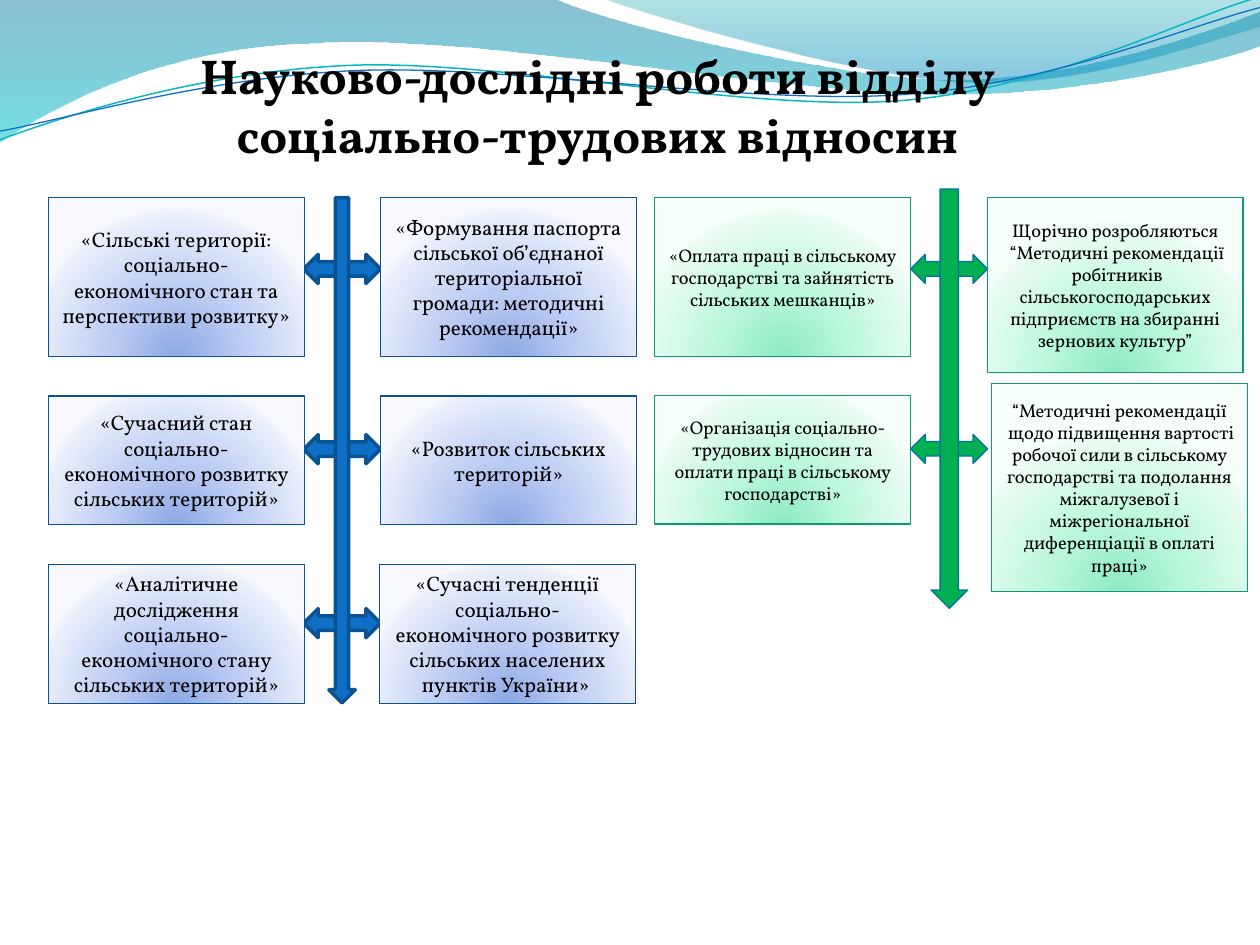
from lxml import etree
from pptx import Presentation
from pptx.dml.color import RGBColor
from pptx.enum.shapes import MSO_SHAPE
from pptx.enum.text import MSO_ANCHOR, PP_ALIGN
from pptx.oxml import parse_xml
from pptx.oxml.ns import nsdecls, qn
from pptx.util import Pt

RECTANGLE = MSO_SHAPE.RECTANGLE
SIDE_ARROW = MSO_SHAPE.LEFT_RIGHT_ARROW
DOWN_ARROW = MSO_SHAPE.DOWN_ARROW
CENTER, MIDDLE = PP_ALIGN.CENTER, MSO_ANCHOR.MIDDLE

FONT = "Vollkorn"
COLORS = {
    "text": "000000",
    "cyan line": "0AB8BF",
    "blue line": "0F6FC6",
    "blue arrow": "0F6FC6",
    "blue arrow edge": "0B5292",
    "blue box edge": "095295",
    "green arrow": "00B050",
    "green arrow edge": "0074A1",
    "green box edge": "0A9B74",
}
# Gradient stops: position %, colour, opacity %
GRADIENTS = {
    "blue box": [(0, "8DA8E3", 100), (43, "BBCBF3", 100), (93, "EAEFFB", 100), (100, "F7F9FF", 100)],
    "green box": [(0, "8DEAC2", 100), (43, "BAF8DB", 100), (93, "EAFCF3", 100), (100, "F7FFFB", 100)],
    "wide wave": [(0, "0074A1", 45), (100, "00C6CF", 55)],
    "right wave": [(0, "00A1A9", 30), (80, "008BBF", 45)],
}
LINEAR = '<a:lin ang="5400000" scaled="0"/>'
RADIAL = '<a:path path="circle"><a:fillToRect l="50000" t="130000" r="50000" b="-30000"/></a:path>'

# Each wave: name, start point, then lines (1 point) and Bezier curves (3 points)
WAVES = [
    ("wide wave", (0, 0), [
        [(316.8, -0.7)],
        [(342.7, 12.2), (478.1, 45.4), (545.8, 45.4)],
        [(614.2, 45.4), (689.8, 18.7), (720, 6.5)],
        [(720.7, 25.9)],
        [(707.8, 31.7), (626.4, 54.7), (537.1, 54)],
        [(447.8, 54), (275, 20.2), (185, 24.5)],
        [(92.9, 25.9), (33.1, 59.8), (-0.7, 81.4)]]),
    ("right wave", (344.9, -0.7), [
        [(366.5, 7.9), (491, 44.6), (553.7, 46.8)],
        [(616.3, 49.7), (691.9, 23), (720, 15.1)],
        [(720, 0)]]),
    ("cyan line", (0, 79.9), [
        [(34.6, 67), (113.8, 41), (199.4, 37.4)],
        [(284.4, 33.8), (427, 64.1), (513.4, 57.6)],
        [(599.8, 51.1), (675.4, 10.8), (718.6, -1.4)]]),
    ("blue line", (0, 74.9), [
        [(33.8, 69.1), (118.1, 43.9), (203.8, 40.3)],
        [(290.2, 36.7), (429.8, 60.5), (516.2, 54)],
        [(601.9, 48.2), (677.5, 15.1), (720, 4.3)]]),
]
LINE_WIDTHS = {"cyan line": 0.85, "blue line": 0.75}

BOX_WIDTH = 146.2
# Each box: left, top, height, paragraphs
GROUPS = [
    {"color": "blue", "size": 12, "edge": 2, "side left": 173.5, "side tops": [145.4, 248.4, 347.8],
     "down": (187.9, 113, 15.1, 288.7),
     "boxes": [
         (27.7, 113, 90.7, ["«Сільські території: соціально-економічного стан та перспективи розвитку»"]),
         (217.6, 113, 90.7, ["«Формування паспорта сільської об’єднаної територіальної громади: методичні рекомендації»"]),
         (27.7, 226.3, 73.4, ["«Сучасний стан соціально-економічного розвитку сільських територій»"]),
         (217.6, 226.3, 73.4, ["«Розвиток сільських територій»"]),
         (27.7, 322.7, 79.2, ["«Аналітичне дослідження соціально-економічного стану сільських територій»"]),
         (217, 322.7, 79.2, ["«Сучасні тенденції соціально-економічного розвитку сільських населених пунктів України» "]),
     ]},
    {"color": "green", "size": 10.5, "edge": 0.75, "side left": 520.4, "side tops": [145.4, 248.2],
     "down": (532, 108, 20.9, 239.6),
     "boxes": [
         (374.2, 113, 90.7, ["«Оплата праці в сільському господарстві та зайнятість сільських мешканців»"]),
         (564.2, 113, 100.1, ["Щорічно розробляються", " “Методичні рекомендації",
                              " робітників сільськогосподарських",
                              "підприємств на збиранні зернових культур”"]),
         (374.2, 226.1, 73.4, ["«Організація соціально-трудових відносин та оплати праці в сільському господарстві»"]),
         (566.6, 219.2, 118.8, ["“Методичні рекомендації",
                                " щодо підвищення вартості робочої сили в сільському господарстві та подолання "
                                "міжгалузевої і міжрегіональної диференціації в оплаті праці»"]),
     ]},
]


def set_gradient(shape, name, direction):
    stops = "".join(
        f'<a:gs pos="{position * 1000}"><a:srgbClr val="{color}">'
        f'<a:alpha val="{opacity * 1000}"/></a:srgbClr></a:gs>'
        for position, color, opacity in GRADIENTS[name])
    properties = shape._element.spPr
    geometry = properties.find(qn("a:prstGeom"))
    if geometry is None:
        geometry = properties.find(qn("a:custGeom"))
    geometry.addnext(parse_xml(
        f'<a:gradFill {nsdecls("a")} rotWithShape="1"><a:gsLst>{stops}</a:gsLst>{direction}</a:gradFill>'))


def write_text(shape, lines, size, bold=False):
    frame = shape.text_frame
    frame.word_wrap = True
    frame.text = "\n".join(lines)
    for paragraph in frame.paragraphs:
        paragraph.alignment = CENTER
        for run in paragraph.runs:
            run.font.name = FONT
            run.font.size = Pt(size)
            run.font.bold = bold
            run.font.color.rgb = RGBColor.from_string(COLORS["text"])


presentation = Presentation()
presentation.slide_width, presentation.slide_height = Pt(720), Pt(540)
slide = presentation.slides.add_slide(presentation.slide_layouts[6])
shapes = slide.shapes

for name, start, segments in WAVES:
    is_line = name in LINE_WIDTHS
    builder = shapes.build_freeform(Pt(start[0]), Pt(start[1]))
    builder.add_line_segments(
        [(Pt(x), Pt(y)) for segment in segments for x, y in segment], close=not is_line)
    wave = builder.convert_to_shape()
    # Join the three straight steps of each curve into one Bezier segment
    steps = iter(list(wave._element.iter(qn("a:lnTo"))))
    for segment in segments:
        group_steps = [next(steps) for point in segment]
        if len(segment) == 3:
            curve = etree.Element(qn("a:cubicBezTo"))
            group_steps[0].addprevious(curve)
            for step in group_steps:
                curve.append(step[0])
                step.getparent().remove(step)
    wave.shadow.inherit = False
    if is_line:
        wave.fill.background()
        wave.line.color.rgb = RGBColor.from_string(COLORS[name])
        wave.line.width = Pt(LINE_WIDTHS[name])
    else:
        wave.line.fill.background()
        set_gradient(wave, name, LINEAR)

title = shapes.add_textbox(Pt(39.6), Pt(22.3), Pt(613.4), Pt(74.9))
title.text_frame.margin_left = Pt(2.6)
write_text(title, ["Науково-дослідні роботи відділу ", "соціально-трудових відносин "], 28, bold=True)

for group in GROUPS:
    color = group["color"]
    arrows = [(SIDE_ARROW, (group["side left"], top, 43.9, 16.6)) for top in group["side tops"]]
    arrows.append((DOWN_ARROW, group["down"]))
    for kind, place in arrows:
        arrow = shapes.add_shape(kind, *map(Pt, place))
        arrow.shadow.inherit = False
        arrow.fill.solid()
        arrow.fill.fore_color.rgb = RGBColor.from_string(COLORS[f"{color} arrow"])
        arrow.line.color.rgb = RGBColor.from_string(COLORS[f"{color} arrow edge"])
        arrow.line.width = Pt(group["edge"])
    for left, top, height, lines in group["boxes"]:
        box = shapes.add_shape(RECTANGLE, Pt(left), Pt(top), Pt(BOX_WIDTH), Pt(height))
        box.shadow.inherit = False
        box.line.color.rgb = RGBColor.from_string(COLORS[f"{color} box edge"])
        box.line.width = Pt(0.75)
        set_gradient(box, f"{color} box", RADIAL)
        box.text_frame.vertical_anchor = MIDDLE
        write_text(box, lines, group["size"])

presentation.save("out.pptx")
